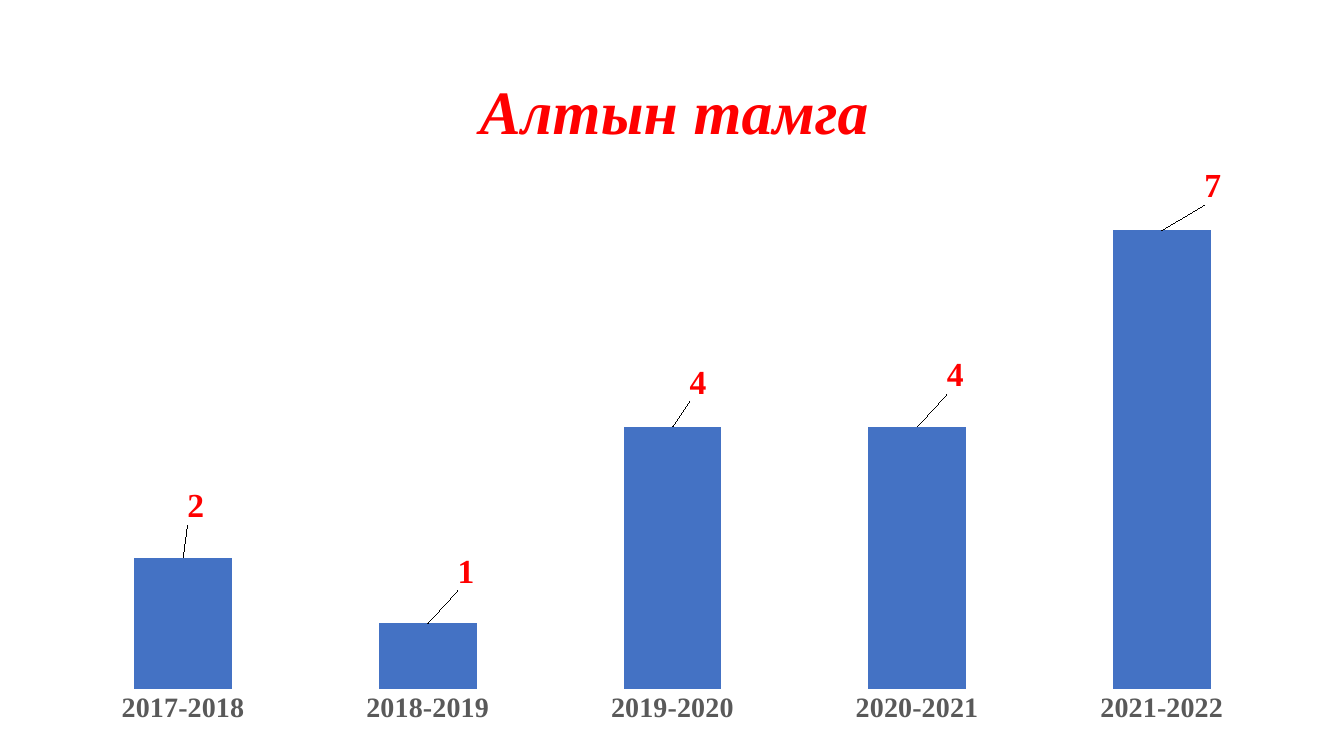
import pptx
import pptx.chart.data
import pptx.dml.color
import pptx.enum.chart
import pptx.oxml
import pptx.oxml.ns
import pptx.util

SERIF = "Times New Roman"
RED = "FF0000"


def colour(hex_text):
    return pptx.dml.color.RGBColor.from_string(hex_text)


def manual_layout(**settings):
    """Layout element whose values are shares of the chart's size."""
    namespace = pptx.oxml.ns.nsdecls("c")
    children = "".join(f'<c:{name} val="{value}"/>' for name, value in settings.items())
    return pptx.oxml.parse_xml(
        f"<c:layout {namespace}><c:manualLayout>{children}</c:manualLayout></c:layout>")


deck = pptx.Presentation()
deck.slide_width = pptx.util.Inches(13.33)
deck.slide_height = pptx.util.Inches(7.5)
page = deck.slides.add_slide(deck.slide_layouts[6])

# Column chart
awards = pptx.chart.data.CategoryChartData()
awards.categories = [f"{year}-{year + 1}" for year in range(2017, 2022)]
awards.add_series("Series 1", (2, 1, 4, 4, 7))
frame = page.shapes.add_chart(
    pptx.enum.chart.XL_CHART_TYPE.COLUMN_CLUSTERED,
    pptx.util.Inches(0.35), pptx.util.Inches(0.24),
    pptx.util.Inches(12.64), pptx.util.Inches(7.09), awards)
chart = frame.chart
chart.has_legend = False
chart.font.name = "Calibri"
chart.font.size = pptx.util.Pt(10)

# Chart title
chart.has_title = True
title = chart.chart_title
title.text_frame.text = "Алтын тамга"
title_font = title.text_frame.paragraphs[0].runs[0].font
title_font.name = SERIF
title_font.size = pptx.util.Pt(44)
title_font.bold = True
title_font.italic = True
title_font.color.rgb = colour(RED)
title_xml = title._element
for old_layout in title_xml.findall(pptx.oxml.ns.qn("c:layout")):
    title_xml.remove(old_layout)
title_xml.find(pptx.oxml.ns.qn("c:tx")).addnext(
    manual_layout(xMode="edge", yMode="edge", x=0.34, y=0.05))

# Plot area
plot_xml = chart._chartSpace.chart.plotArea
for old_layout in plot_xml.findall(pptx.oxml.ns.qn("c:layout")):
    plot_xml.remove(old_layout)
plot_xml.insert(0, manual_layout(layoutTarget="inner", xMode="edge", yMode="edge",
                                 x=0.02, y=0.197, w=0.96, h=0.733))

# Axes
value_axis = chart.value_axis
value_axis.minimum_scale = 0
value_axis.maximum_scale = 8
value_axis.has_major_gridlines = False
value_axis.visible = False
year_axis = chart.category_axis
year_axis.major_tick_mark = pptx.enum.chart.XL_TICK_MARK.NONE
year_axis.format.line.fill.background()
year_font = year_axis.tick_labels.font
year_font.name = SERIF
year_font.size = pptx.util.Pt(20)
year_font.bold = True
year_font.color.rgb = colour("595959")

# Columns
plot = chart.plots[0]
plot.gap_width = 150
plot.vary_by_categories = False
series = plot.series[0]
series.format.fill.solid()
series.format.fill.fore_color.rgb = colour("4472C4")

# Value labels, each shifted from the top of its column
label_shifts = [(0.01, -0.04), (0.03, -0.04), (0.02, -0.03), (0.03, -0.04), (0.04, -0.03)]
for index, (shift_x, shift_y) in enumerate(label_shifts):
    label = series.points[index].data_label
    label.font.name = SERIF
    label.font.size = pptx.util.Pt(24)
    label.font.bold = True
    label.font.color.rgb = colour(RED)
    label.position = pptx.enum.chart.XL_LABEL_POSITION.OUTSIDE_END
for label_xml, (shift_x, shift_y) in zip(
        series._element.iter(pptx.oxml.ns.qn("c:dLbl")), label_shifts):
    label_xml.find(pptx.oxml.ns.qn("c:idx")).addnext(manual_layout(x=shift_x, y=shift_y))

deck.save("out.pptx")
